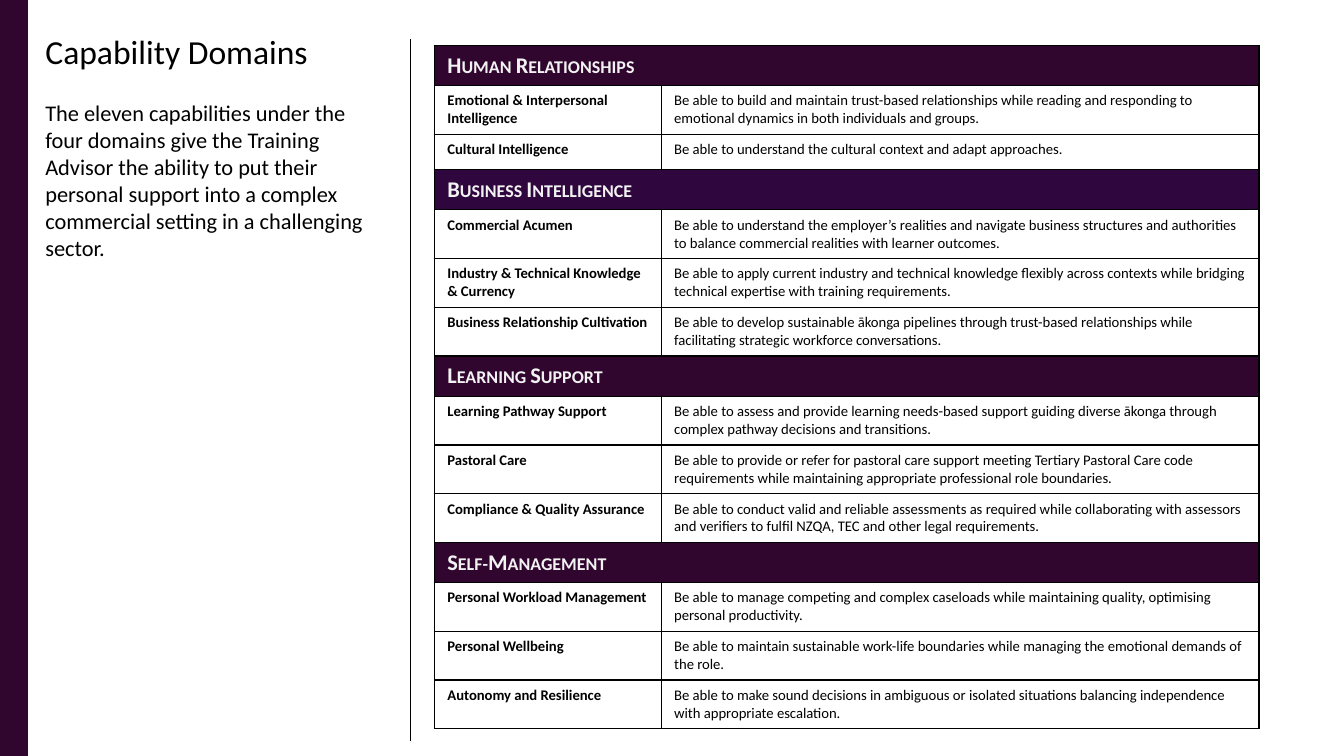
from dataclasses import dataclass

from lxml.etree import SubElement
from pptx import Presentation
from pptx.dml.color import RGBColor
from pptx.enum.shapes import MSO_CONNECTOR, MSO_SHAPE
from pptx.enum.text import MSO_ANCHOR, MSO_AUTO_SIZE, PP_ALIGN
from pptx.oxml import parse_xml
from pptx.oxml.ns import nsdecls, qn
from pptx.table import Table, _Cell
from pptx.text.text import TextFrame, _Paragraph, _Run
from pptx.util import Pt

COLORS = {"plum": "30062E", "violet": "30063E", "black": "000000", "pale": "F2F2F2"}
FONT = "Calibri"
COLUMN_WIDTHS = (162, 427)
HEADER_HEIGHT, ROW_HEIGHT, SHORT_HEIGHT = 28.6, 34.8, 25.2


@dataclass
class Capability:
    name: str
    ability: str
    height: float = ROW_HEIGHT


@dataclass
class Domain:
    name: str
    capabilities: list[Capability]
    color: str = "plum"


DOMAINS = [
    Domain("Human Relationships", [
        Capability("Emotional & Interpersonal Intelligence",
                   "Be able to build and maintain trust-based relationships while reading and "
                   "responding to emotional dynamics in both individuals and groups."),
        Capability("Cultural Intelligence",
                   "Be able to understand the cultural context and adapt approaches.",
                   SHORT_HEIGHT),
    ]),
    Domain("Business Intelligence", [
        Capability("Commercial Acumen",
                   "Be able to understand the employer’s realities and navigate business structures "
                   "and authorities to balance commercial realities with learner outcomes."),
        Capability("Industry & Technical Knowledge & Currency",
                   "Be able to apply current industry and technical knowledge flexibly across "
                   "contexts while bridging technical expertise with training requirements."),
        Capability("Business Relationship Cultivation",
                   "Be able to develop sustainable ākonga pipelines through trust-based "
                   "relationships while facilitating strategic workforce conversations."),
    ], "violet"),
    Domain("Learning Support", [
        Capability("Learning Pathway Support",
                   "Be able to assess and provide learning needs-based support guiding diverse "
                   "ākonga through complex pathway decisions and transitions."),
        Capability("Pastoral Care",
                   "Be able to provide or refer for pastoral care support meeting Tertiary Pastoral "
                   "Care code requirements while maintaining appropriate professional role boundaries."),
        Capability("Compliance & Quality Assurance",
                   "Be able to conduct valid and reliable assessments as required while collaborating "
                   "with assessors and verifiers to fulfil NZQA, TEC and other legal requirements."),
    ]),
    Domain("Self-Management", [
        Capability("Personal Workload Management",
                   "Be able to manage competing and complex caseloads while maintaining quality, "
                   "optimising personal productivity."),
        Capability("Personal Wellbeing",
                   "Be able to maintain sustainable work-life boundaries while managing the emotional "
                   "demands of the role."),
        Capability("Autonomy and Resilience",
                   "Be able to make sound decisions in ambiguous or isolated situations balancing "
                   "independence with appropriate escalation."),
    ]),
]


def rgb(name: str) -> RGBColor:
    return RGBColor.from_string(COLORS[name])


def add_run(p: _Paragraph, text: str, size: float, color: str = "black", bold: bool = False) -> _Run:
    p.alignment = PP_ALIGN.LEFT
    r = p.add_run()
    r.text = text
    r.font.name, r.font.size, r.font.bold = FONT, Pt(size), bold
    r.font.color.rgb = rgb(color)
    return r


def format_frame(tf: TextFrame) -> None:
    tf.margin_left = tf.margin_right = tf.margin_top = tf.margin_bottom = 0
    tf.word_wrap, tf.auto_size = True, MSO_AUTO_SIZE.NONE
    tf.vertical_anchor = MSO_ANCHOR.TOP


def format_cell(cell: _Cell, fill: str | None = None) -> None:
    cell.margin_left = cell.margin_right = Pt(9.3)
    cell.margin_top = cell.margin_bottom = Pt(4.6)
    if fill:
        cell.fill.solid()
        cell.fill.fore_color.rgb = rgb(fill)
    else:
        cell.fill.background()
    tcPr = cell._tc.get_or_add_tcPr()
    for i, side in enumerate("LRTB"):
        tcPr.insert(i, parse_xml(
            f'<a:ln{side} {nsdecls("a")} w="{Pt(1)}"><a:solidFill>'
            f'<a:srgbClr val="{COLORS["black"]}"/></a:solidFill></a:ln{side}>'))


def fill_domain(table: Table, row: int, domain: Domain) -> int:
    """Write a heading row and its capabilities; return the next free row."""
    table.rows[row].height = Pt(HEADER_HEIGHT)
    for col in range(2):
        format_cell(table.cell(row, col), domain.color)
    heading = table.cell(row, 0)
    heading.merge(table.cell(row, 1))
    r = add_run(heading.text_frame.paragraphs[0], domain.name, 16, "pale", True)
    r._r.get_or_add_rPr().set("cap", "small")
    for row, item in enumerate(domain.capabilities, row + 1):
        table.rows[row].height = Pt(item.height)
        for col, text in enumerate((item.name, item.ability)):
            cell = table.cell(row, col)
            format_cell(cell)
            add_run(cell.text_frame.paragraphs[0], text, 10.5, bold=col == 0)
    return row + 1


def main() -> None:
    prs = Presentation()
    prs.slide_width, prs.slide_height = Pt(960), Pt(540)
    s = prs.slides.add_slide(prs.slide_layouts[5])

    # Left edge bar
    bar = s.shapes.add_shape(MSO_SHAPE.RECTANGLE, Pt(-8), Pt(-0.5), Pt(28), Pt(540.5))
    bar.shadow.inherit = False
    bar.fill.solid()
    bar.fill.fore_color.rgb = rgb("plum")
    bar.line.fill.background()

    # Title and introduction
    title = s.shapes.title
    title.left, title.top, title.width, title.height = Pt(32.4), Pt(22.3), Pt(241), Pt(30)
    format_frame(title.text_frame)
    add_run(title.text_frame.paragraphs[0], "Capability Domains", 24)
    intro = s.shapes.add_textbox(Pt(32.4), Pt(71), Pt(241), Pt(117))
    format_frame(intro.text_frame)
    add_run(intro.text_frame.paragraphs[0],
            "The eleven capabilities under the four domains give the Training Advisor the ability to "
            "put their personal support into a complex commercial setting in a challenging sector.", 16)

    # Capability table
    heights = [h for d in DOMAINS for h in (HEADER_HEIGHT, *(c.height for c in d.capabilities))]
    table = s.shapes.add_table(len(heights), 2, Pt(310.3), Pt(32.4),
                               Pt(sum(COLUMN_WIDTHS)), Pt(sum(heights))).table
    table.first_row = table.horz_banding = False
    for column, width in zip(table.columns, COLUMN_WIDTHS):
        column.width = Pt(width)
    row = 0
    for domain in DOMAINS:
        row = fill_domain(table, row, domain)

    # Vertical divider
    divider = s.shapes.add_connector(MSO_CONNECTOR.STRAIGHT, Pt(293), Pt(28), Pt(293), Pt(529))
    divider.line.color.rgb = rgb("black")
    divider.line.width = Pt(0.75)
    SubElement(divider._element.spPr, qn("a:effectLst"))

    prs.save("out.pptx")


if __name__ == "__main__":
    main()
